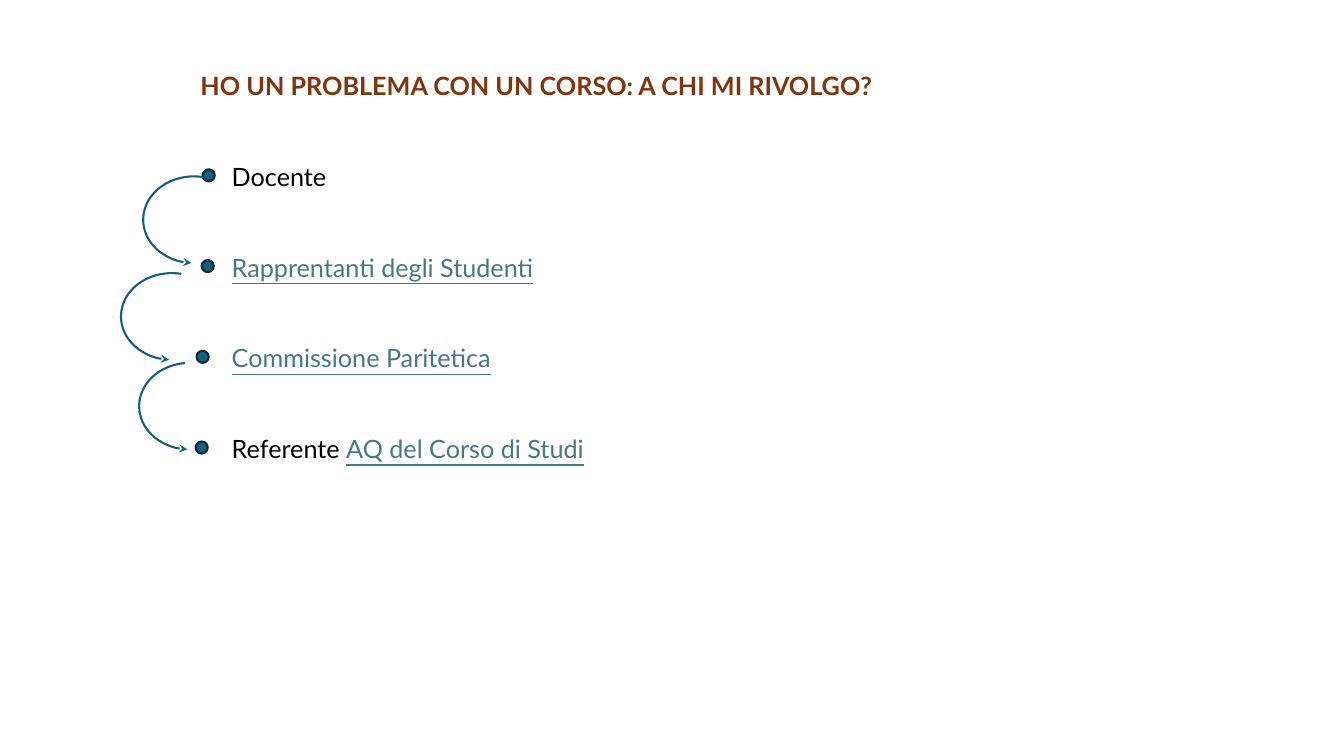
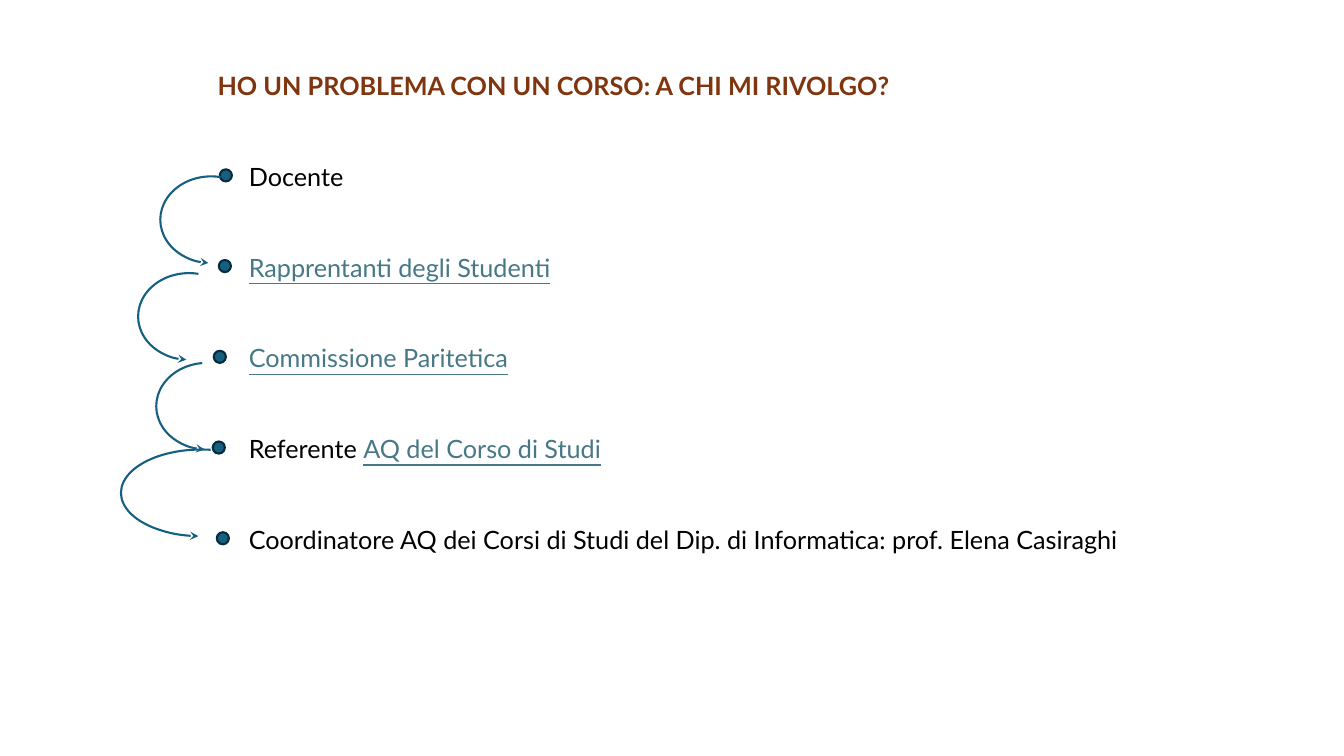
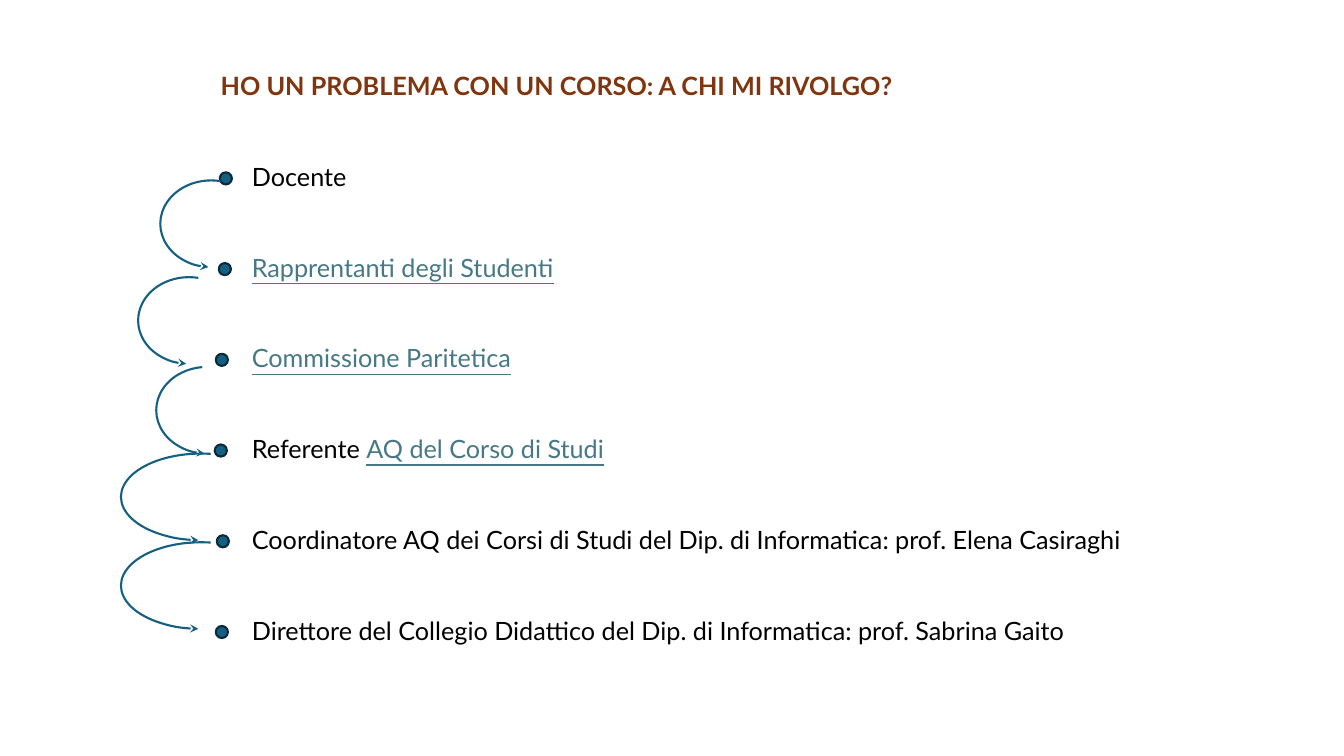
"""Builds three slides that show, step by step, whom to contact about a course."""
import pptx
import pptx.dml.color
import pptx.enum.shapes
import pptx.enum.text
import pptx.util

PX = 9144
FONT = "Lato"
BROWN, BLACK, LINK, BLUE, NAVY = "80350E", "000000", "467886", "156082", "092A39"
TITLE = "HO UN PROBLEMA CON UN CORSO: A CHI MI RIVOLGO?"
CONTACTS = [
    [("Docente", False)],
    [("Rapprentanti degli Studenti", True)],
    [("Commissione Paritetica", True)],
    [("Referente ", False), ("AQ del Corso di Studi", True)],
    [("Coordinatore AQ dei Corsi di Studi del Dip. di Informatica: prof. Elena Casiraghi", False)],
    [("Direttore del Collegio Didattico del Dip. di Informatica: prof. Sabrina Gaito", False)],
]
DOT_SIZE, DOT_STEP, ARC_HEIGHT = 12, 90, 86
ARC_START, ARC_END, ARC_SHORT_END = 56.19, 169.46, 158.09
ARCS = [
    (159, 0, 101, ARC_END),
    (137, 96, 101, ARC_END),
    (155, 185, 101, ARC_SHORT_END),
    (120, 271, 159, ARC_END),
    (120, 359, 159, ARC_END),
]
SLIDES = [
    dict(box_left=189, box_height=449, dot_top=168, arc_top=175, arc_shift=-17,
         dot_lefts=[201, 200, 195, 194]),
    dict(box_left=206, box_height=586, dot_top=168, arc_top=175, arc_shift=0,
         dot_lefts=[218, 217, 212, 211, 215]),
    dict(box_left=209, box_height=631, dot_top=171, arc_top=179, arc_shift=0,
         dot_lefts=[218, 217, 214, 213, 215, 214]),
]


def color(value):
    return pptx.dml.color.RGBColor.from_string(value)


def write(para, text, fill=BLACK, bold=False, underline=False):
    span = para.add_run()
    span.text = text
    span.font.name = FONT
    span.font.size = pptx.util.Pt(18)
    span.font.bold = bold
    span.font.underline = underline
    span.font.color.rgb = color(fill)


deck = pptx.Presentation()
deck.slide_width, deck.slide_height = 1333 * PX, 750 * PX

for layout in SLIDES:
    page = deck.slides.add_slide(deck.slide_layouts[6])
    dot_lefts = layout["dot_lefts"]

    box = page.shapes.add_textbox(layout["box_left"] * PX, 50 * PX, 1000 * PX, layout["box_height"] * PX)
    frame = box.text_frame
    frame.word_wrap = True
    frame.vertical_anchor = pptx.enum.text.MSO_ANCHOR.TOP
    para = frame.paragraphs[0]
    para.line_spacing = 1.5
    write(para, TITLE, fill=BROWN, bold=True)
    for contact in CONTACTS[:len(dot_lefts)]:
        para = frame.add_paragraph()
        para.line_spacing = 1.5
        para.space_before = pptx.util.Pt(32.4)
        para._p.get_or_add_pPr().set("marL", str(31 * PX))
        for text, linked in contact:
            write(para, text, fill=LINK if linked else BLACK, underline=linked)

    for index, left in enumerate(dot_lefts):
        top = layout["dot_top"] + index * DOT_STEP
        dot = page.shapes.add_shape(pptx.enum.shapes.MSO_SHAPE.OVAL,
                                    left * PX, top * PX, DOT_SIZE * PX, DOT_SIZE * PX)
        dot.shadow.inherit = False
        dot.fill.solid()
        dot.fill.fore_color.rgb = color(BLUE)
        dot.line.color.rgb = color(NAVY)
        dot.line.width = pptx.util.Pt(1.5)

    for left, offset, width, end in ARCS[:len(dot_lefts) - 1]:
        arc = page.shapes.add_shape(pptx.enum.shapes.MSO_SHAPE.ARC,
                                    (left + layout["arc_shift"]) * PX, (layout["arc_top"] + offset) * PX,
                                    width * PX, ARC_HEIGHT * PX)
        arc.adjustments[0], arc.adjustments[1] = ARC_START, end
        arc.shadow.inherit = False
        arc.fill.background()
        arc.line.color.rgb = color(BLUE)
        arc.line.width = pptx.util.Pt(1.5)
        head = arc.line._get_or_add_ln().makeelement(pptx.oxml.ns.qn("a:headEnd"), {"type": "stealth"})
        arc.line._get_or_add_ln().append(head)

deck.save("out.pptx")
